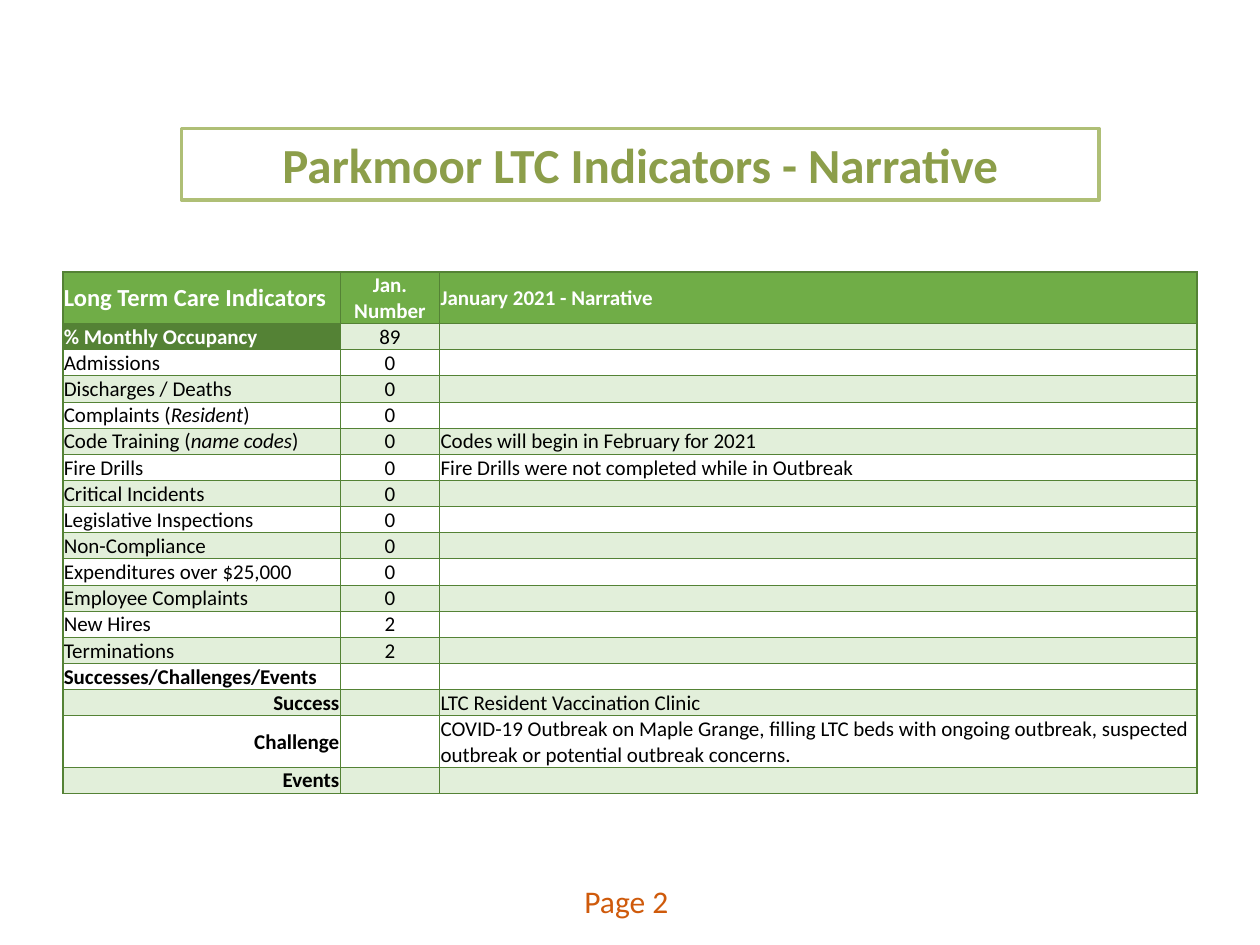
from typing import NamedTuple

import pptx
import pptx.dml.color
import pptx.enum.shapes
import pptx.enum.text
import pptx.oxml
import pptx.oxml.ns
import pptx.util

Pt = pptx.util.Pt
ALIGN = pptx.enum.text.PP_ALIGN
FONT = "Calibri"
WHITE, BLACK = "FFFFFF", "000000"
GREEN, DARK_GREEN, PALE_GREEN = "70AD47", "548235", "E2EFDA"
COLUMN_WIDTHS = (158.4, 56.9, 432.7)
LINE_HEIGHT, TWO_LINE_HEIGHT = 14.95, 29.4


class Indicator(NamedTuple):
    label: str
    number: str = ""
    narrative: str = ""
    note: str = ""  # italic, in brackets after the label
    bold: bool = False
    align: ALIGN = ALIGN.LEFT
    height: float = LINE_HEIGHT


INDICATORS = [
    Indicator("% Monthly Occupancy", "89", bold=True),
    Indicator("Admissions", "0"),
    Indicator("Discharges / Deaths", "0"),
    Indicator("Complaints", "0", note="Resident"),
    Indicator("Code Training", "0", "Codes will begin in February for 2021", "name codes"),
    Indicator("Fire Drills", "0", "Fire Drills were not completed while in Outbreak"),
    Indicator("Critical Incidents", "0"),
    Indicator("Legislative Inspections", "0"),
    Indicator("Non-Compliance", "0"),
    Indicator("Expenditures over $25,000", "0"),
    Indicator("Employee Complaints", "0"),
    Indicator("New Hires", "2"),
    Indicator("Terminations", "2"),
    Indicator("Successes/Challenges/Events", bold=True),
    Indicator("Success", narrative="LTC Resident Vaccination Clinic",
              bold=True, align=ALIGN.RIGHT),
    Indicator("Challenge", narrative="COVID-19 Outbreak on Maple Grange, filling LTC beds with "
              "ongoing outbreak, suspected outbreak or potential outbreak concerns.",
              bold=True, align=ALIGN.RIGHT, height=TWO_LINE_HEIGHT),
    Indicator("Events", bold=True, align=ALIGN.RIGHT),
]


def rgb(value: str) -> pptx.dml.color.RGBColor:
    return pptx.dml.color.RGBColor.from_string(value)


def format_run(r, size: float, color: str, bold: bool = False) -> None:
    r.font.name, r.font.size, r.font.bold = FONT, Pt(size), bold
    r.font.color.rgb = rgb(color)


def set_text(tf, text: str, size: float, color: str, bold: bool = False,
             align: ALIGN = ALIGN.LEFT, note: str = "") -> None:
    p = tf.paragraphs[0]
    p.alignment = align
    if note:
        for part, italic in ((f"{text} (", False), (note, True), (")", False)):
            r = p.add_run()
            r.text, r.font.italic = part, italic
    elif text:
        p.text = text
    else:
        # An empty cell needs its own text size, or its row grows.
        p._p.append(pptx.oxml.parse_xml(
            f'<a:endParaRPr {pptx.oxml.ns.nsdecls("a")} sz="{int(size * 100)}"/>'))
    for r in p.runs:
        format_run(r, size, color, bold)


def set_borders(cell, **widths: float) -> None:
    """Draw the sides L, R, T and B with widths in points."""
    tc_pr = cell._tc.get_or_add_tcPr()
    for side, width in widths.items():
        tc_pr.append(pptx.oxml.parse_xml(
            f'<a:ln{side} {pptx.oxml.ns.nsdecls("a")} w="{Pt(width)}"><a:solidFill>'
            f'<a:srgbClr val="{DARK_GREEN}"/></a:solidFill></a:ln{side}>'))


def add_title(s) -> None:
    sp = s.shapes.add_shape(pptx.enum.shapes.MSO_SHAPE.RECTANGLE,
                            Pt(103.7), Pt(73.4), Pt(524.2), Pt(41))
    sp.shadow.inherit = False
    sp.fill.solid()
    sp.fill.fore_color.rgb = rgb(WHITE)
    sp.line.color.rgb = rgb("AFBF76")
    sp.line.width = Pt(2)
    sp.line._get_or_add_ln().append(
        pptx.oxml.parse_xml(f'<a:round {pptx.oxml.ns.nsdecls("a")}/>'))
    sp.text_frame.vertical_anchor = pptx.enum.text.MSO_ANCHOR.TOP
    set_text(sp.text_frame, "Parkmoor LTC Indicators - Narrative", 28, "8C9E4A", True, ALIGN.CENTER)


def add_page_label(s) -> None:
    sp = s.shapes.add_textbox(Pt(326.9), Pt(500.4), Pt(167.8), Pt(28.8))
    sp.text_frame.word_wrap = True
    set_text(sp.text_frame, "Page 2", 18, "CF5A0B")


def add_indicator_table(s) -> None:
    heights = [TWO_LINE_HEIGHT] + [i.height for i in INDICATORS]
    table = s.shapes.add_table(len(heights), len(COLUMN_WIDTHS), Pt(36), Pt(155.5),
                               Pt(sum(COLUMN_WIDTHS)), Pt(sum(heights))).table
    table.first_row = table.horz_banding = False
    for column, width in zip(table.columns, COLUMN_WIDTHS):
        column.width = Pt(width)
    for row, height in zip(table.rows, heights):
        row.height = Pt(height)

    last_row, last_col = len(heights) - 1, len(COLUMN_WIDTHS) - 1
    for i, row in enumerate(table.rows):
        for j, cell in enumerate(row.cells):
            cell.margin_left = cell.margin_right = cell.margin_top = Pt(0.5)
            cell.margin_bottom = Pt(0)
            cell.vertical_anchor = pptx.enum.text.MSO_ANCHOR.MIDDLE
            set_borders(cell, L=1 if j == 0 else 0.5, R=1 if j == last_col else 0.5,
                        T=1 if i == 0 else 0.5, B=1 if i == last_row else 0.5)
            if i == 0:
                fill = GREEN
            elif (i, j) == (1, 0):
                fill = DARK_GREEN
            else:
                fill = PALE_GREEN if i % 2 else None
            if fill:
                cell.fill.solid()
                cell.fill.fore_color.rgb = rgb(fill)
            else:
                cell.fill.background()

    headings = (("Long Term Care Indicators", 14, ALIGN.LEFT),
                ("Jan.\vNumber", 12, ALIGN.CENTER),
                ("January 2021 - Narrative", 12, ALIGN.LEFT))
    for j, (text, size, align) in enumerate(headings):
        set_text(table.cell(0, j).text_frame, text, size, WHITE, True, align)
    for i, item in enumerate(INDICATORS, 1):
        label, number, narrative = (table.cell(i, j).text_frame for j in range(3))
        set_text(label, item.label, 12, WHITE if i == 1 else BLACK, item.bold, item.align, item.note)
        set_text(number, item.number, 12, BLACK, align=ALIGN.CENTER)
        set_text(narrative, item.narrative, 12, BLACK)


def main() -> None:
    prs = pptx.Presentation()
    prs.slide_width, prs.slide_height = Pt(720), Pt(540)
    s = prs.slides.add_slide(prs.slide_layouts[6])
    add_title(s)
    add_page_label(s)
    add_indicator_table(s)
    prs.save("out.pptx")


if __name__ == "__main__":
    main()
